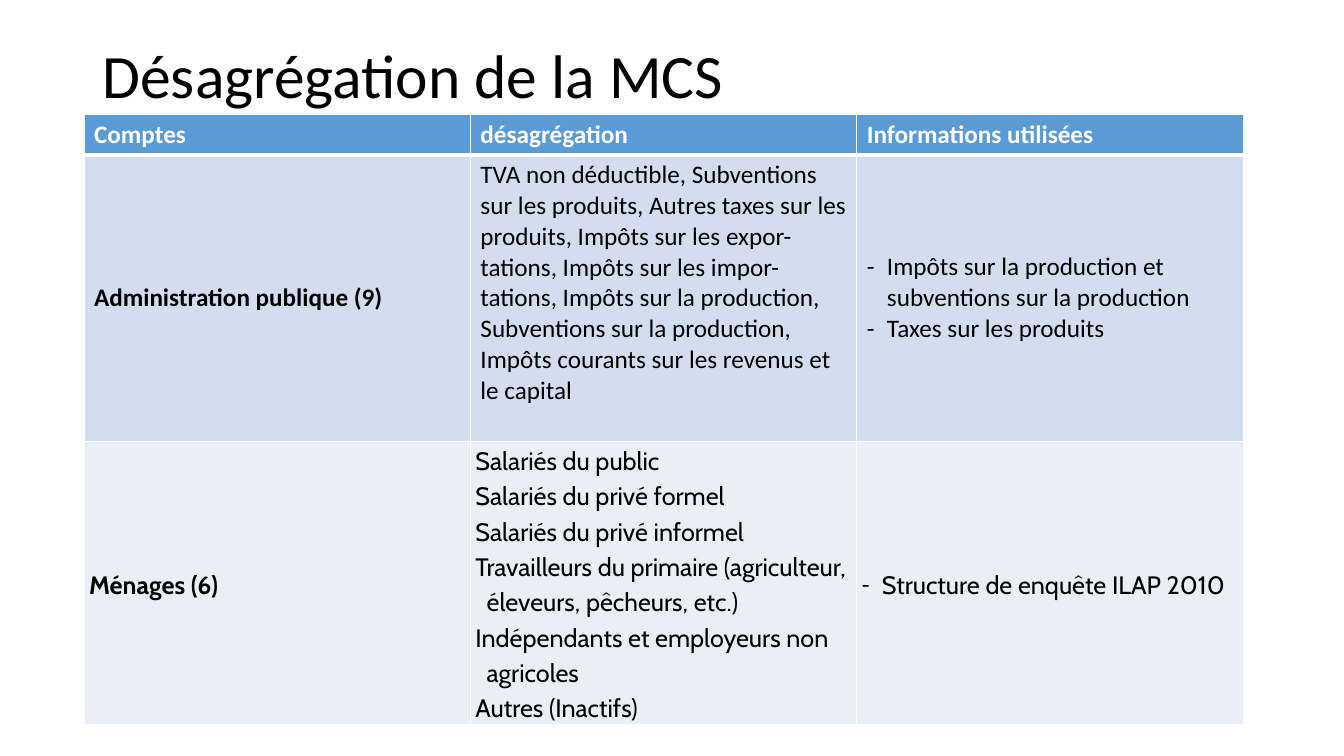
"""Build the slide on how the MCS accounts are broken down."""
from pptx import Presentation
from pptx.dml.color import RGBColor
from pptx.enum.text import MSO_ANCHOR as ANCHOR, PP_ALIGN as ALIGN
from pptx.oxml.ns import qn
from pptx.util import Pt
from lxml.etree import SubElement

TITLE = "Désagrégation de la MCS"
ROWS = [
    [["Comptes"], ["désagrégation"], ["Informations utilisées"]],
    [["Administration publique (9)"],
     ["TVA non déductible, Subventions sur les produits, Autres taxes sur les "
      "produits, Impôts sur les expor-tations, Impôts sur les impor-tations, "
      "Impôts sur la production, Subventions sur la production, "
      "Impôts courants sur les revenus et le capital"],
     ["Impôts sur la production et subventions sur la production",
      "Taxes sur les produits"]],
    [["Ménages (6)"],
     ["Salariés du public", "Salariés du privé formel",
      "Salariés du privé informel",
      "Travailleurs du primaire (agriculteur, éleveurs, pêcheurs, etc.)",
      "Indépendants et employeurs non agricoles", "Autres (Inactifs)"],
     ["Structure de enquête ILAP 2010"]],
]
ROW_STYLES = [
    dict(height=29.2, fill="5B9BD5", color="FFFFFF", font="Calibri",
         spacing=1.0, margins=(7.2, 3.6), bottom=3),
    dict(height=204.5, fill="D2DEEF", color="000000", font="Calibri",
         spacing=1.0, margins=(7.2, 3.6), bottom=1),
    dict(height=202.5, fill="EAEFF7", color="000000", font="Cabin",
         spacing=1.15, margins=(3.6, 0), bottom=1),
]
LEFT, TOP, COL_WIDTH = 60, 81.4, 276
BULLET_INDENT, HANGING_INDENT = 14.4, 8


def rgb(value):
    return RGBColor.from_string(value)


def assign(obj, **values):
    for name, value in values.items():
        setattr(obj, name, value)


def add_text(p, text, font, size, color, bold):
    r = p.add_run()
    r.text = text
    assign(r.font, name=font, size=Pt(size), bold=bold)
    r.font.color.rgb = rgb(color)


def add_indent(p, indent, bullet):
    pPr = p._p.get_or_add_pPr()
    pPr.set("marL", str(Pt(indent)))
    pPr.set("indent", str(-Pt(indent)))
    if bullet:
        SubElement(pPr, qn("a:buFont")).set("typeface", "Calibri")
        SubElement(pPr, qn("a:buChar")).set("char", "-")


def add_borders(cell, bottom, top):
    tcPr = cell._tc.get_or_add_tcPr()
    widths = {"a:lnL": 1, "a:lnR": 1, "a:lnT": top, "a:lnB": bottom}
    for i, (tag, width) in enumerate(widths.items()):
        ln = tcPr.makeelement(qn(tag), {"w": str(Pt(width))})
        fill = SubElement(ln, qn("a:solidFill"))
        SubElement(fill, qn("a:srgbClr")).set("val", "FFFFFF")
        tcPr.insert(i, ln)


def fill_cell(cell, lines, row, col):
    style = ROW_STYLES[row]
    side, edge = (Pt(m) for m in style["margins"])
    top_aligned = row == 0 or (row, col) == (1, 1)
    assign(cell, margin_left=side, margin_right=side, margin_top=edge,
           margin_bottom=edge,
           vertical_anchor=ANCHOR.TOP if top_aligned else ANCHOR.MIDDLE)
    cell.fill.solid()
    cell.fill.fore_color.rgb = rgb(style["fill"])
    tf = cell.text_frame
    for i, line in enumerate(lines):
        p = tf.add_paragraph() if i else tf.paragraphs[0]
        p.line_spacing = style["spacing"]
        if row and col == 2:
            add_indent(p, BULLET_INDENT, True)
        elif len(lines) > 1:
            add_indent(p, HANGING_INDENT, False)
        add_text(p, line, style["font"], 18, style["color"],
                 row == 0 or col == 0)
    top = ROW_STYLES[row - 1]["bottom"] if row else 1
    add_borders(cell, style["bottom"], top)


def add_title(s):
    title = s.shapes.title
    assign(title, left=Pt(66), top=Pt(28.8), width=Pt(828), height=Pt(104.4))
    tf = title.text_frame
    assign(tf, vertical_anchor=ANCHOR.TOP, word_wrap=True)
    p = tf.paragraphs[0]
    assign(p, alignment=ALIGN.LEFT, line_spacing=0.9)
    add_text(p, TITLE, "Calibri", 44, "000000", False)


def add_accounts(s):
    height = sum(style["height"] for style in ROW_STYLES)
    count = len(ROWS[0])
    table = s.shapes.add_table(len(ROWS), count, Pt(LEFT), Pt(TOP),
                               Pt(COL_WIDTH * count), Pt(height)).table
    for column in table.columns:
        column.width = Pt(COL_WIDTH)
    for row, cells in enumerate(ROWS):
        table.rows[row].height = Pt(ROW_STYLES[row]["height"])
        for col, lines in enumerate(cells):
            fill_cell(table.cell(row, col), lines, row, col)


def main():
    prs = Presentation()
    assign(prs, slide_width=Pt(960), slide_height=Pt(540))
    s = prs.slides.add_slide(prs.slide_layouts[5])
    add_title(s)
    add_accounts(s)
    prs.save("out.pptx")


if __name__ == "__main__":
    main()
